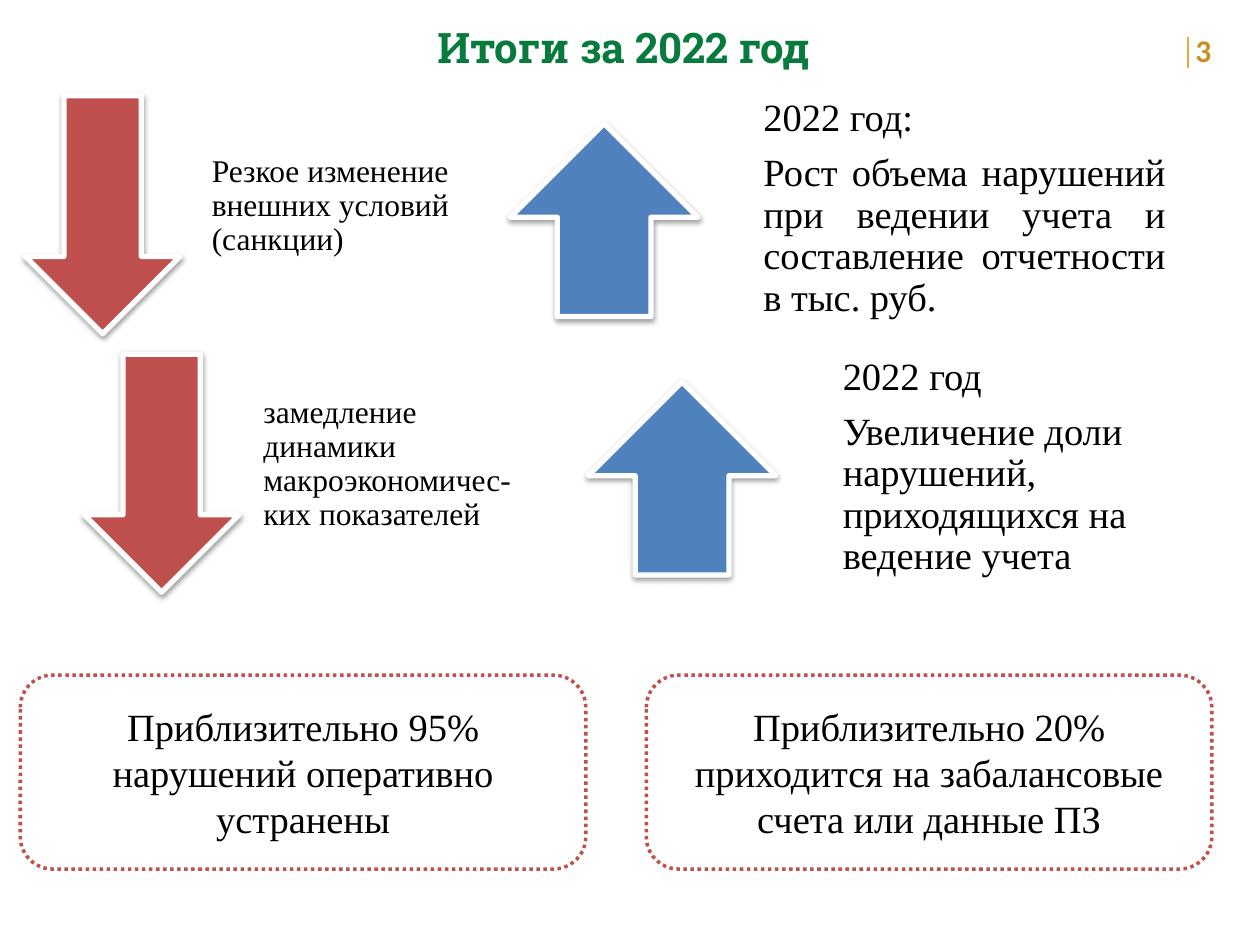
from lxml import etree
from pptx import Presentation
from pptx.dml.color import RGBColor
from pptx.enum.dml import MSO_LINE
from pptx.enum.shapes import MSO_CONNECTOR, MSO_SHAPE
from pptx.enum.text import MSO_ANCHOR, MSO_AUTO_SIZE, PP_ALIGN
from pptx.oxml import parse_xml
from pptx.oxml.ns import nsdecls, qn
from pptx.util import Cm, Pt

GREEN = RGBColor(0x07, 0x7A, 0x3E)
GOLD = RGBColor(0xC7, 0x90, 0x23)
LIGHT_GOLD = RGBColor(0xDE, 0xAA, 0x46)
BLUE = RGBColor(0x4F, 0x81, 0xBD)
RED = RGBColor(0xC0, 0x50, 0x4D)
WHITE = RGBColor(0xFF, 0xFF, 0xFF)
BLACK = RGBColor(0, 0, 0)

UP, DOWN = MSO_SHAPE.UP_ARROW, MSO_SHAPE.DOWN_ARROW
ROUNDED = MSO_SHAPE.ROUNDED_RECTANGLE
STRAIGHT = MSO_CONNECTOR.STRAIGHT
DOTTED = MSO_LINE.ROUND_DOT
MIDDLE = MSO_ANCHOR.MIDDLE
LEFT, CENTER, JUSTIFY = PP_ALIGN.LEFT, PP_ALIGN.CENTER, PP_ALIGN.JUSTIFY

SHADOW = (
    f'<a:effectLst {nsdecls("a")}>'
    '<a:outerShdw blurRad="40000" dist="20000" dir="5400000" rotWithShape="0">'
    '<a:srgbClr val="000000"><a:alpha val="38000"/></a:srgbClr>'
    '</a:outerShdw></a:effectLst>'
)


class SlideBuilder:
    body_font = "Times New Roman"

    def __init__(self, slide):
        self.slide = slide

    def style(self, paragraph, size, color=BLACK, name=body_font, bold=False):
        font = paragraph.font
        font.name, font.size, font.bold = name, Pt(size), bold
        font.color.rgb = color

    def title(self, text, left, top, width, height):
        heading = self.slide.shapes.title
        heading.left, heading.top = Cm(left), Cm(top)
        heading.width, heading.height = Cm(width), Cm(height)
        frame = heading.text_frame
        frame.text = text
        frame.word_wrap = True
        frame.auto_size = MSO_AUTO_SIZE.NONE
        frame.vertical_anchor = MIDDLE
        paragraph = frame.paragraphs[0]
        paragraph.alignment = CENTER
        paragraph._p.get_or_add_pPr().set("marL", str(Cm(0.15)))
        self.style(paragraph, 24, GREEN, "Roboto Slab", True)

    def page_number(self, text, left, top, width, height):
        box = self.slide.shapes.add_textbox(Cm(left), Cm(top), Cm(width), Cm(height))
        box.text_frame.word_wrap = True
        box.text_frame.text = text
        self.style(box.text_frame.paragraphs[0], 18, GOLD, "Calibri", True)

    def rule(self, left, top, bottom):
        line = self.slide.shapes.add_connector(
            STRAIGHT, Cm(left), Cm(top), Cm(left), Cm(bottom))
        line.line.color.rgb = LIGHT_GOLD
        line.line.width = Pt(1)
        etree.SubElement(line._element.spPr, qn("a:effectLst"))

    def shape(self, kind, left, top, width, height, fill, outline, weight):
        shape = self.slide.shapes.add_shape(
            kind, Cm(left), Cm(top), Cm(width), Cm(height))
        shape.fill.solid()
        shape.fill.fore_color.rgb = fill
        shape.line.color.rgb = outline
        shape.line.width = Pt(weight)
        return shape

    def arrow(self, kind, left, top, width, height, fill):
        arrow = self.shape(kind, left, top, width, height, fill, WHITE, 3)
        arrow._element.spPr.append(parse_xml(SHADOW))

    def caption(self, lines, left, top, width, height, size, inset):
        box = self.slide.shapes.add_textbox(Cm(left), Cm(top), Cm(width), Cm(height))
        frame = box.text_frame
        frame.word_wrap = True
        frame.vertical_anchor = MIDDLE
        frame.margin_left = frame.margin_right = frame.margin_bottom = Cm(inset)
        frame.margin_top = 0
        frame.text = "\n".join(text for text, _ in lines)
        for paragraph, (_, alignment) in zip(frame.paragraphs, lines):
            paragraph.alignment = alignment
            paragraph.line_spacing = 0.9
            paragraph.space_after = Pt(size * 0.35)
            self.style(paragraph, size)

    def conclusion(self, text, left, top, width, height):
        panel = self.shape(ROUNDED, left, top, width, height, WHITE, RED, 2)
        panel.shadow.inherit = False
        panel.line.dash_style = DOTTED
        frame = panel.text_frame
        frame.word_wrap = True
        frame.vertical_anchor = MIDDLE
        frame.text = text
        frame.paragraphs[0].alignment = CENTER
        self.style(frame.paragraphs[0], 22)


def main():
    deck = Presentation()
    deck.slide_width, deck.slide_height = Cm(25.4), Cm(19.05)
    page = SlideBuilder(deck.slides.add_slide(deck.slide_layouts[5]))

    page.title("Итоги за 2022 год", 2.08, 0.3, 20.85, 1.27)
    page.page_number("3", 23.85, 0.51, 1.55, 1.02)
    page.rule(23.95, 0.74, 1.37)

    growth = [
        (10.29, 14.96, 2.03, [
            ("2022 год:", LEFT),
            ("Рост объема нарушений при ведении учета и составление "
             "отчетности в тыс. руб.", JUSTIFY)]),
        (11.86, 16.56, 7.24, [
            ("2022 год", LEFT),
            ("Увеличение доли нарушений, приходящихся на ведение учета", LEFT)]),
    ]
    for arrow_left, text_left, top, lines in growth:
        page.arrow(UP, arrow_left, top + 0.46, 3.78, 3.89, BLUE)
        page.caption(lines, text_left, top, 8.97, 4.8, 22, 0.43)

    decline = [
        (0.51, 3.91, 1.93, "Резкое изменение внешних условий (санкции)"),
        (1.7, 4.95, 7.14, "замедление динамики макроэкономичес-ких показателей"),
    ]
    for arrow_left, text_left, top, text in decline:
        page.arrow(DOWN, arrow_left, top, 3.12, 4.8, RED)
        page.caption([(text, LEFT)], text_left, top, 5.94, 4.8, 18, 0.36)

    conclusions = [
        (0.41, "Приблизительно 95% нарушений оперативно устранены"),
        (13.03, "Приблизительно 20% приходится на забалансовые счета или данные ПЗ"),
    ]
    for left, text in conclusions:
        page.conclusion(text, left, 13.61, 11.4, 3.91)

    deck.save("out.pptx")


if __name__ == "__main__":
    main()
